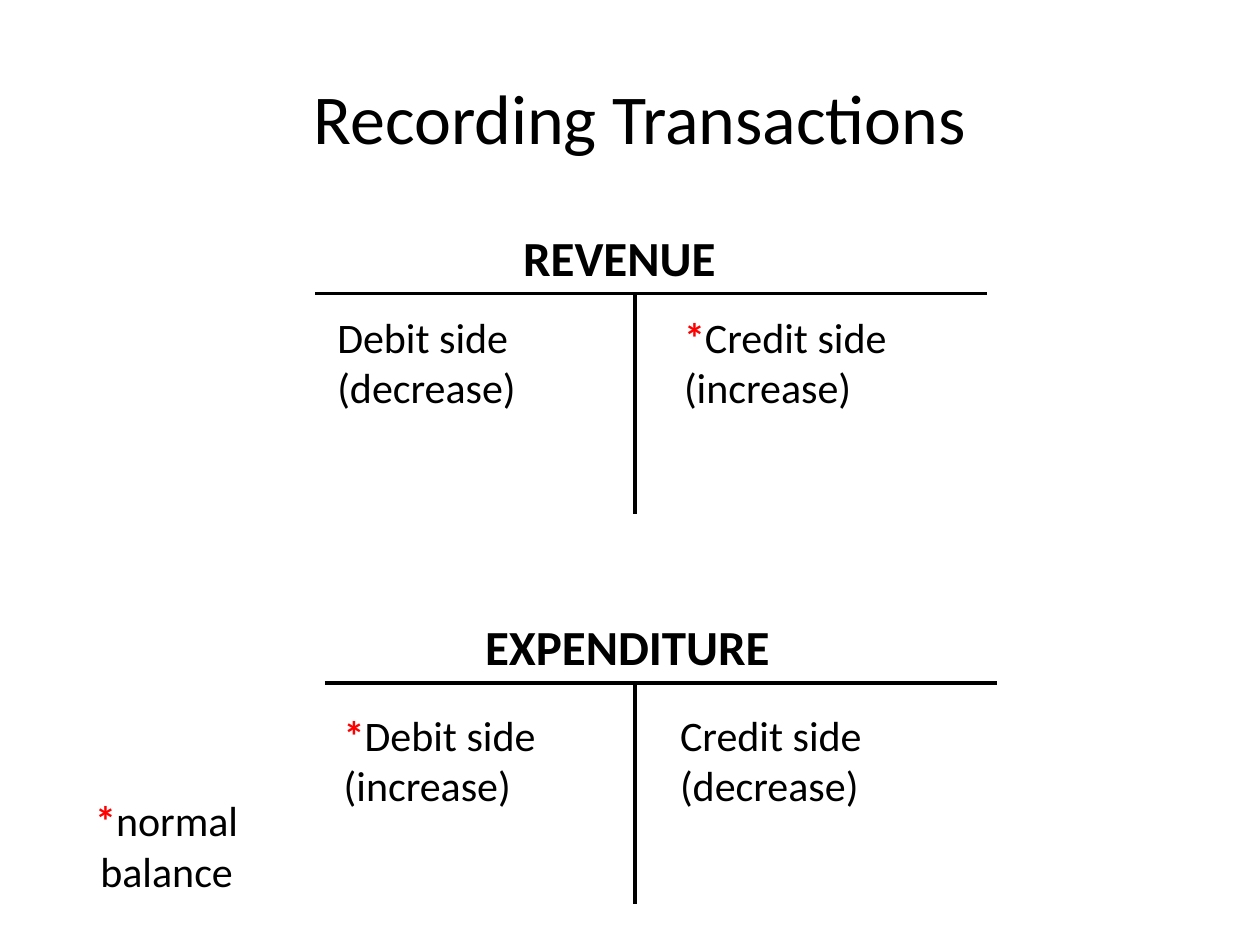
import pptx
import pptx.util
import pptx.dml.color
import pptx.enum.shapes
import pptx.enum.text
from dataclasses import dataclass
from lxml import etree
from pptx.util import Cm


@dataclass(frozen=True)
class Theme:
    font: str = "Calibri"
    ink: str = "000000"
    accent: str = "FF0000"
    title: int = 40
    heading: int = 28
    body: int = 24
    rule: int = 2


theme = Theme()
align = pptx.enum.text.PP_ALIGN
anchor = pptx.enum.text.MSO_ANCHOR

deck = pptx.Presentation()
deck.slide_width, deck.slide_height = Cm(25.4), Cm(19.05)
page = deck.slides.add_slide(deck.slide_layouts[6])


def add_text(left, top, width, height, lines, size, bold=False, alignment=align.LEFT):
    """Add a text box; an asterisk that opens a line becomes a bold accent mark."""
    box = page.shapes.add_textbox(Cm(left), Cm(top), Cm(width), Cm(height))
    frame = box.text_frame
    frame.word_wrap = True
    frame.text = "\n".join(lines)
    for para, line in zip(frame.paragraphs, lines):
        para.alignment = alignment
        if line.startswith("*"):
            para.runs[0].text = "*"
            para.add_run().text = line[1:]
        for span in para.runs:
            marked = span.text == "*"
            span.font.name = theme.font
            span.font.size = pptx.util.Pt(size)
            span.font.bold = bold or marked
            color = theme.accent if marked else theme.ink
            span.font.color.rgb = pptx.dml.color.RGBColor.from_string(color)
    return box


def add_rule(x1, y1, x2, y2):
    rule = page.shapes.add_connector(
        pptx.enum.shapes.MSO_CONNECTOR.STRAIGHT, Cm(x1), Cm(y1), Cm(x2), Cm(y2))
    rule.line.width = pptx.util.Pt(theme.rule)
    rule.line.color.rgb = pptx.dml.color.RGBColor.from_string(theme.ink)
    etree.SubElement(rule.line._get_or_add_ln().getparent(),
                     pptx.oxml.ns.qn("a:effectLst"))


title = add_text(1.47, 0.76, 22.86, 3.18, ["Recording Transactions"],
                 theme.title, alignment=align.CENTER)
title.text_frame.vertical_anchor = anchor.MIDDLE

# Each T-account: heading (text, left, width, alignment), bar left and top,
# top of the sides, then the left edge and lines of each side.
accounts = [
    (("REVENUE", 9.93, 5.11, align.CENTER), 6.35, 5.92, 6.15,
     [(6.55, ["Debit side", "(decrease)"]),
      (13.54, ["*Credit side", "(increase)"])]),
    (("EXPENDITURE", 9.53, 6.55, align.LEFT), 6.55, 13.77, 14.17,
     [(6.68, ["*Debit side", "(increase)"]),
      (13.46, ["Credit side", "(decrease)"])]),
]
bar_width, stem_x, stem_height = 13.55, 12.8, 4.45
heading_height, side_width, side_height = 1.46, 5.82, 2.31

for heading, bar_left, bar_top, side_top, sides in accounts:
    name, left, width, alignment = heading
    add_text(left, bar_top - heading_height, width, heading_height, [name],
             theme.heading, bold=True, alignment=alignment)
    add_rule(bar_left, bar_top, bar_left + bar_width, bar_top)
    add_rule(stem_x, bar_top, stem_x, bar_top + stem_height)
    for left, lines in sides:
        add_text(left, side_top, side_width, side_height, lines, theme.body)

add_text(1.24, 15.9, 4.24, side_height, ["*normal balance"],
         theme.body, alignment=align.CENTER)

deck.save("out.pptx")
